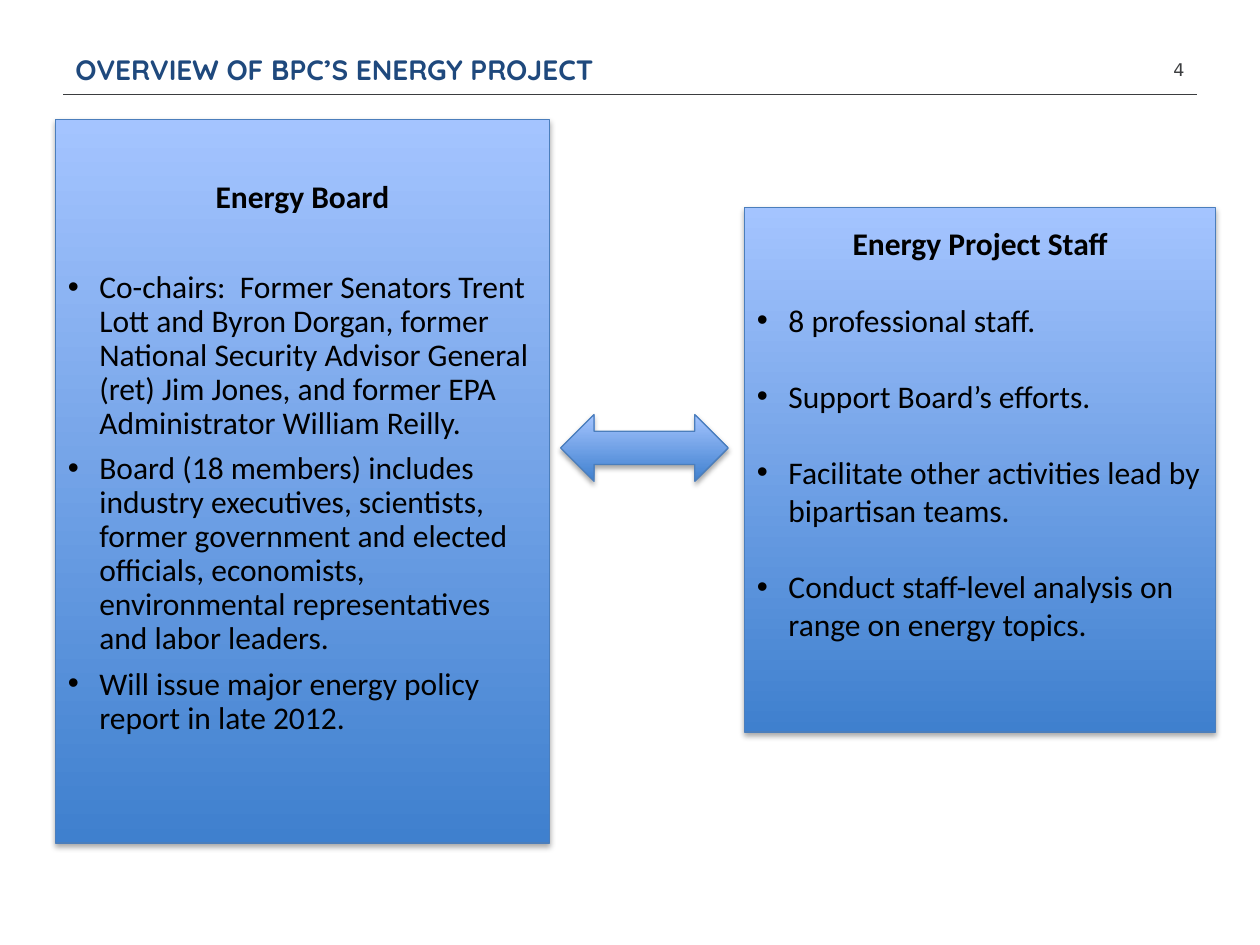
from lxml.etree import SubElement
from pptx import Presentation
from pptx.dml.color import RGBColor
from pptx.enum.shapes import MSO_CONNECTOR as Connector, MSO_SHAPE as Shape
from pptx.enum.text import MSO_ANCHOR as Anchor, PP_ALIGN as Align
from pptx.oxml.ns import qn
from pptx.util import Inches, Pt

TITLE = "OVERVIEW OF BPC’S ENERGY PROJECT"
PAGE_NUMBER = "4"
PANELS = [
    {
        "area": (0.44, 0.95, 3.92, 5.74),
        "top_inset": 0.49,
        "line_spacing": 0.9,
        "heading_gap": 32,
        "bullet_gap": 6.3,
        "heading": "Energy Board",
        "bullets": [
            "Co-chairs:  Former Senators Trent Lott and Byron Dorgan, former National "
            "Security Advisor General (ret) Jim Jones, and former EPA Administrator "
            "William Reilly.",
            "Board (18 members) includes industry executives, scientists, former "
            "government and elected officials, economists, environmental "
            "representatives and labor leaders.",
            "Will issue major energy policy report in late 2012.",
        ],
    },
    {
        "area": (5.91, 1.65, 3.74, 4.16),
        "top_inset": 0.13,
        "line_spacing": 1.0,
        "heading_gap": 22,
        "bullet_gap": 22,
        "heading": "Energy Project Staff",
        "bullets": [
            "8 professional staff.",
            "Support Board’s efforts.",
            "Facilitate other activities lead by bipartisan teams.",
            "Conduct staff-level analysis on range on energy topics.",
        ],
    },
]
ARROW_AREA = (4.45, 3.29, 1.33, 0.53)
GRADIENT = ("3F80CE", "A4C4FF")
OUTLINE, INK, TITLE_BLUE, BLACK = "4B7EBC", "3B3D3F", "1F497D", "000000"


def color(value):
    return RGBColor.from_string(value)


def style(para, name, size, value, bold=False):
    font = para.font
    font.name, font.size, font.bold = name, Pt(size), bold
    font.color.rgb = color(value)


def add_label(page, area, text, align, *look):
    box = page.shapes.add_textbox(*map(Inches, area))
    frame = box.text_frame
    frame.word_wrap = True
    frame.vertical_anchor = Anchor.MIDDLE
    frame.text = text
    para = frame.paragraphs[0]
    para.alignment = align
    style(para, *look)


def add_block(page, kind, area):
    block = page.shapes.add_shape(kind, *map(Inches, area))
    block.fill.gradient()
    block.fill.gradient_angle = 90
    for stop, value in zip(block.fill.gradient_stops, GRADIENT):
        stop.color.rgb = color(value)
    block.line.color.rgb = color(OUTLINE)
    block.line.width = Pt(0.75)
    block.shadow.inherit = False
    effects = block.element.spPr.find(qn("a:effectLst"))
    shadow = SubElement(effects, qn("a:outerShdw"), blurRad=str(Pt(3.1)),
                        dist=str(Pt(1.8)), dir="5400000", rotWithShape="0")
    tone = SubElement(shadow, qn("a:srgbClr"), val=BLACK)
    SubElement(tone, qn("a:alpha"), val="35000")
    return block


def add_bullet(para):
    props = para._p.get_or_add_pPr()
    props.set("marL", str(Inches(0.25)))
    props.set("indent", str(Inches(-0.25)))
    SubElement(props, qn("a:buFont"), typeface="Arial")
    SubElement(props, qn("a:buChar"), char="•")


def add_panel(page, panel):
    frame = add_block(page, Shape.RECTANGLE, panel["area"]).text_frame
    frame.word_wrap = True
    frame.vertical_anchor = Anchor.TOP
    frame.margin_top = Inches(panel["top_inset"])
    for index, text in enumerate([panel["heading"], *panel["bullets"]]):
        is_heading = index == 0
        para = frame.paragraphs[0] if is_heading else frame.add_paragraph()
        para.text = text
        para.alignment = Align.CENTER if is_heading else Align.LEFT
        para.line_spacing = panel["line_spacing"]
        para.space_after = Pt(panel["heading_gap" if is_heading else "bullet_gap"])
        if not is_heading:
            add_bullet(para)
        style(para, "Calibri", 18, BLACK, is_heading)


def main():
    deck = Presentation()
    deck.slide_width, deck.slide_height = Inches(10), Inches(7.5)
    page = deck.slides.add_slide(deck.slide_layouts[6])

    rule = page.shapes.add_connector(
        Connector.STRAIGHT, *map(Inches, (0.5, 0.75, 9.5, 0.75)))
    rule.line.color.rgb = color(INK)
    rule.line.width = Pt(1)
    SubElement(rule.element.spPr, qn("a:effectLst"))

    add_label(page, (0.5, 0.35, 7.49, 0.4), TITLE, Align.LEFT,
              "Quicksand", 16, TITLE_BLUE, True)
    add_label(page, (8.94, 0.35, 0.56, 0.4), PAGE_NUMBER, Align.RIGHT,
              "DejaVu Sans", 10, INK)
    for panel in PANELS:
        add_panel(page, panel)
    add_block(page, Shape.LEFT_RIGHT_ARROW, ARROW_AREA)
    deck.save("out.pptx")


if __name__ == "__main__":
    main()
